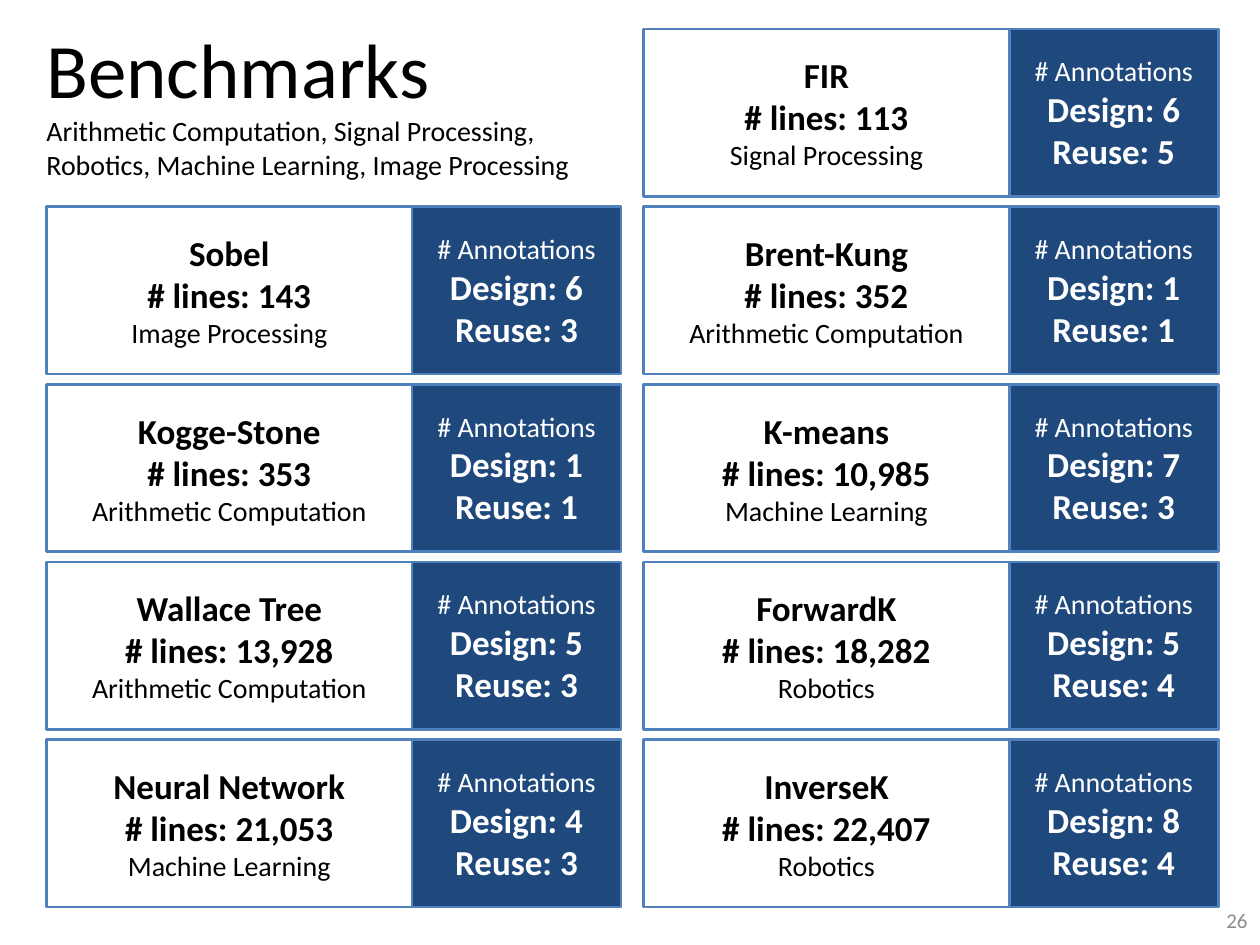
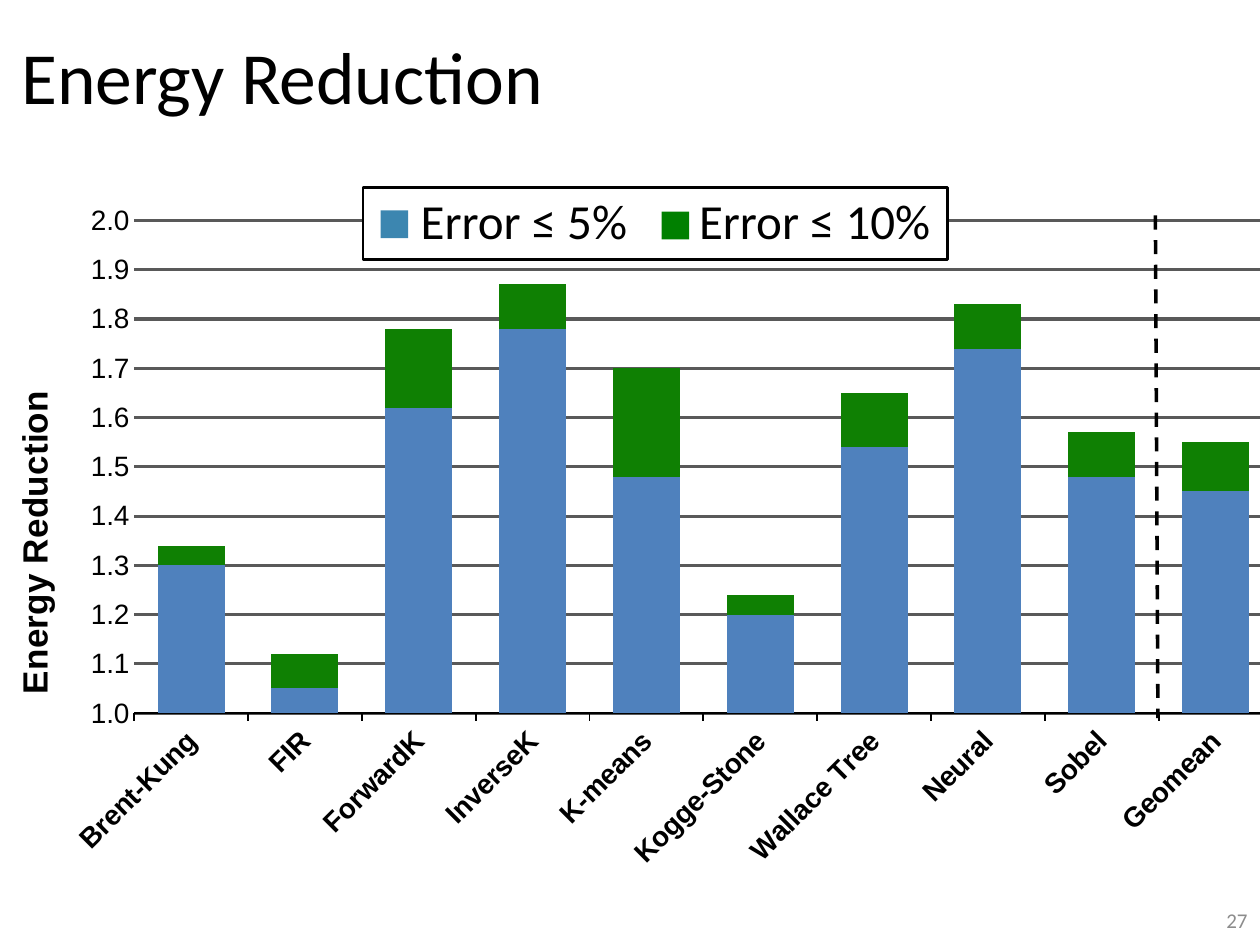
from typing import NamedTuple

from lxml import etree
from pptx import Presentation
from pptx import slide as sl
from pptx import util as u
from pptx.chart import data as cd
from pptx.dml import color as dc
from pptx.enum import chart as ec
from pptx.enum import dml, shapes, text
from pptx.oxml import ns

# Shared look
HEX = {
    "white": "FFFFFF", "black": "000000", "navy": "1F497D", "blue": "4F81BD",
    "green": "0F8003", "grid": "595959", "page": "8C8C8C",
    "key5": "3C86B0", "key10": "008000",
}
BODY, AXIS = "Calibri", "Arial"
LEFT, MID, RIGHT = text.PP_ALIGN.LEFT, text.PP_ALIGN.CENTER, text.PP_ALIGN.RIGHT


class Box(NamedTuple):
    x: float
    y: float
    w: float
    h: float


class Line(NamedTuple):
    words: str
    size: float
    bold: bool = False


class Bench(NamedTuple):
    name: str
    lines: str
    field: str
    design: int
    reuse: int
    col: int
    row: int


class Key(NamedTuple):
    label: str
    color: str
    mark: Box
    words: Box


# Card grid
COLS = (0.37, 5.11)
TOP, PITCH, HIGH = 0.23, 1.41, 1.33
WIDE, SIDE = 2.9, 1.66
BENCHES = [
    Bench("FIR", "113", "Signal Processing", 6, 5, 1, 0),
    Bench("Brent-Kung", "352", "Arithmetic Computation", 1, 1, 1, 1),
    Bench("K-means", "10,985", "Machine Learning", 7, 3, 1, 2),
    Bench("ForwardK", "18,282", "Robotics", 5, 4, 1, 3),
    Bench("InverseK", "22,407", "Robotics", 8, 4, 1, 4),
    Bench("Sobel", "143", "Image Processing", 6, 3, 0, 1),
    Bench("Kogge-Stone", "353", "Arithmetic Computation", 1, 1, 0, 2),
    Bench("Wallace Tree", "13,928", "Arithmetic Computation", 5, 3, 0, 3),
    Bench("Neural Network", "21,053", "Machine Learning", 4, 3, 0, 4),
]

# Chart values
CATS = ["Brent-Kung", "FIR", "ForwardK", "InverseK", "K-means",
        "Kogge-Stone", "Wallace Tree", "Neural", "Sobel", "Geomean"]
LOW = [1.3, 1.05, 1.62, 1.78, 1.48, 1.2, 1.54, 1.74, 1.48, 1.45]
MORE = [0.04, 0.07, 0.16, 0.09, 0.22, 0.04, 0.11, 0.09, 0.09, 0.1]
KEYS = [
    Key("Error ≤ 5%", "key5", Box(3.02, 1.67, 0.22, 0.22),
        Box(3.24, 1.46, 1.89, 0.57)),
    Key("Error ≤ 10%", "key10", Box(5.25, 1.68, 0.22, 0.22),
        Box(5.45, 1.46, 2.53, 0.57)),
]
PLOT = Box(1.06, 1.75, 9.03, 3.91)
FRAME = Box(-0.23, 1.52, 10.53, 5.47)


def rgb(name: str) -> dc.RGBColor:
    return dc.RGBColor.from_string(HEX[name])


def place(box: Box) -> list[u.Length]:
    return [u.Inches(n) for n in box]


def write(shape, lines: list[Line], color: str, align=LEFT,
          anchor=text.MSO_ANCHOR.MIDDLE) -> None:
    frame = shape.text_frame
    frame.word_wrap = True
    frame.vertical_anchor = anchor
    frame.text = "\n".join(line.words for line in lines)
    for para, line in zip(frame.paragraphs, lines):
        para.alignment = align
        font = para.runs[0].font
        font.name, font.size, font.bold = BODY, u.Pt(line.size), line.bold
        font.color.rgb = rgb(color)


def label(tree, box: Box, lines: list[Line], color: str = "black",
          align=LEFT, anchor=text.MSO_ANCHOR.MIDDLE) -> None:
    write(tree.add_textbox(*place(box)), lines, color, align, anchor)


def rect(tree, box: Box, fill: str, edge: str = ""):
    shape = tree.add_shape(shapes.MSO_SHAPE.RECTANGLE, *place(box))
    shape.shadow.inherit = False
    shape.fill.solid()
    shape.fill.fore_color.rgb = rgb(fill)
    if edge:
        shape.line.color.rgb = rgb(edge)
        shape.line.width = u.Pt(1.5)
    else:
        shape.line.fill.background()
    return shape


def start(deck, box: Box, title: list[Line], page: int) -> sl.Slide:
    """Add a slide with its title and page number."""
    slide = deck.slides.add_slide(deck.slide_layouts[6])
    label(slide.shapes, box, title)
    label(slide.shapes, Box(7.67, 7.1, 2.33, 0.4), [Line(str(page), 12)],
          "page", RIGHT)
    return slide


def card(slide: sl.Slide, item: Bench) -> None:
    tree = slide.shapes.add_group_shape().shapes
    x, y = COLS[item.col], TOP + item.row * PITCH
    main = rect(tree, Box(x, y, WIDE, HIGH), "white", "blue")
    write(main, [Line(item.name, 20, True),
                 Line(f"# lines: {item.lines}", 20, True),
                 Line(item.field, 16)], "black", MID)
    side = rect(tree, Box(x + WIDE, y, SIDE, HIGH), "navy", "blue")
    write(side, [Line("# Annotations", 16),
                 Line(f"Design: {item.design}", 20, True),
                 Line(f"Reuse: {item.reuse}", 20, True)], "white", MID)


def pin(node, index: int, **parts: float) -> None:
    """Give a chart part a manual layout, in shares of the chart frame."""
    for old in node.findall(ns.qn("c:layout")):
        node.remove(old)
    layout = etree.Element(ns.qn("c:layout"))
    manual = etree.SubElement(layout, ns.qn("c:manualLayout"))
    if "w" in parts:
        etree.SubElement(manual, ns.qn("c:layoutTarget"), val="inner")
    for side in "xy":
        etree.SubElement(manual, ns.qn(f"c:{side}Mode"), val="edge")
    for key, share in parts.items():
        etree.SubElement(manual, ns.qn(f"c:{key}"), val=f"{share:.3f}")
    node.insert(index, layout)


def turn(node, angle: int) -> None:
    """Rotate chart text by an angle in degrees."""
    body = next(node.iter(ns.qn("a:bodyPr")))
    body.set("rot", str(angle * 60000))
    body.set("vert", "horz")


def style(font, size: float, bold: bool) -> None:
    font.name, font.size, font.bold = AXIS, u.Pt(size), bold
    font.color.rgb = rgb("black")


def bars(slide: sl.Slide) -> None:
    data = cd.CategoryChartData(number_format="0.00")
    data.categories = CATS
    for key, vals in zip(KEYS, (LOW, MORE)):
        data.add_series(key.label, vals)
    chart = slide.shapes.add_chart(
        ec.XL_CHART_TYPE.COLUMN_STACKED, *place(FRAME), data).chart
    chart.has_legend = chart.has_title = False
    chart.font.name, chart.font.size = BODY, u.Pt(10)
    chart.font.color.rgb = rgb("black")

    # Columns
    plot = chart.plots[0]
    plot.gap_width, plot.overlap, plot.vary_by_categories = 70, 100, False
    for series, color in zip(plot.series, ("blue", "green")):
        series.format.fill.solid()
        series.format.fill.fore_color.rgb = rgb(color)
    pin(chart._chartSpace.chart.plotArea, 0,
        x=(PLOT.x - FRAME.x) / FRAME.w, y=(PLOT.y - FRAME.y) / FRAME.h,
        w=PLOT.w / FRAME.w, h=PLOT.h / FRAME.h)

    # Category axis
    cat = chart.category_axis
    cat.major_tick_mark = ec.XL_TICK_MARK.OUTSIDE
    cat.format.line.color.rgb = rgb("black")
    cat.format.line.width = u.Pt(1)
    style(cat.tick_labels.font, 16, True)
    turn(cat._element.find(ns.qn("c:txPr")), -45)

    # Value axis
    val = chart.value_axis
    val.minimum_scale, val.maximum_scale, val.major_unit = 1, 2, 0.1
    val.major_tick_mark = ec.XL_TICK_MARK.NONE
    val.format.line.fill.background()
    val.major_gridlines.format.line.color.rgb = rgb("grid")
    val.major_gridlines.format.line.width = u.Pt(1.75)
    val.tick_labels.number_format = "0.0"
    val.tick_labels.number_format_is_linked = False
    style(val.tick_labels.font, 16, False)
    title = val.axis_title
    title.text_frame.text = "Energy Reduction"
    style(title.text_frame.paragraphs[0].runs[0].font, 20, True)
    turn(title._element, -90)
    pin(title._element, 1, x=0.026, y=0.28)


def divide(slide: sl.Slide) -> None:
    ends = [u.Inches(n) for n in (9.17, 1.71, 9.19, 5.7)]
    rule = slide.shapes.add_connector(shapes.MSO_CONNECTOR.STRAIGHT, *ends)
    rule.line.color.rgb = rgb("black")
    rule.line.width = u.Pt(2)
    rule.line.dash_style = dml.MSO_LINE.DASH
    etree.SubElement(rule._element.spPr, ns.qn("a:effectLst"))


def legend(slide: sl.Slide) -> None:
    tree = slide.shapes.add_group_shape().shapes
    rect(tree, Box(2.88, 1.49, 4.64, 0.57), "white", "black")
    for key in KEYS:
        rect(tree, key.mark, key.color)
        label(tree, key.words, [Line(key.label, 28)],
              anchor=text.MSO_ANCHOR.TOP)


def main() -> None:
    deck = Presentation()
    deck.slide_width, deck.slide_height = u.Inches(10), u.Inches(7.5)

    # Benchmark cards
    slide = start(deck, Box(0.27, -0.03, 4.78, 1.67), [
        Line("Benchmarks", 44),
        Line("Arithmetic Computation, Signal Processing, "
             "Robotics, Machine Learning, Image Processing", 16)], 26)
    for item in BENCHES:
        card(slide, item)

    # Energy chart
    slide = start(deck, Box(0.07, 0.02, 9.88, 1.15),
                  [Line("Energy Reduction", 42)], 27)
    bars(slide)
    divide(slide)
    legend(slide)

    deck.save("out.pptx")


if __name__ == "__main__":
    main()
